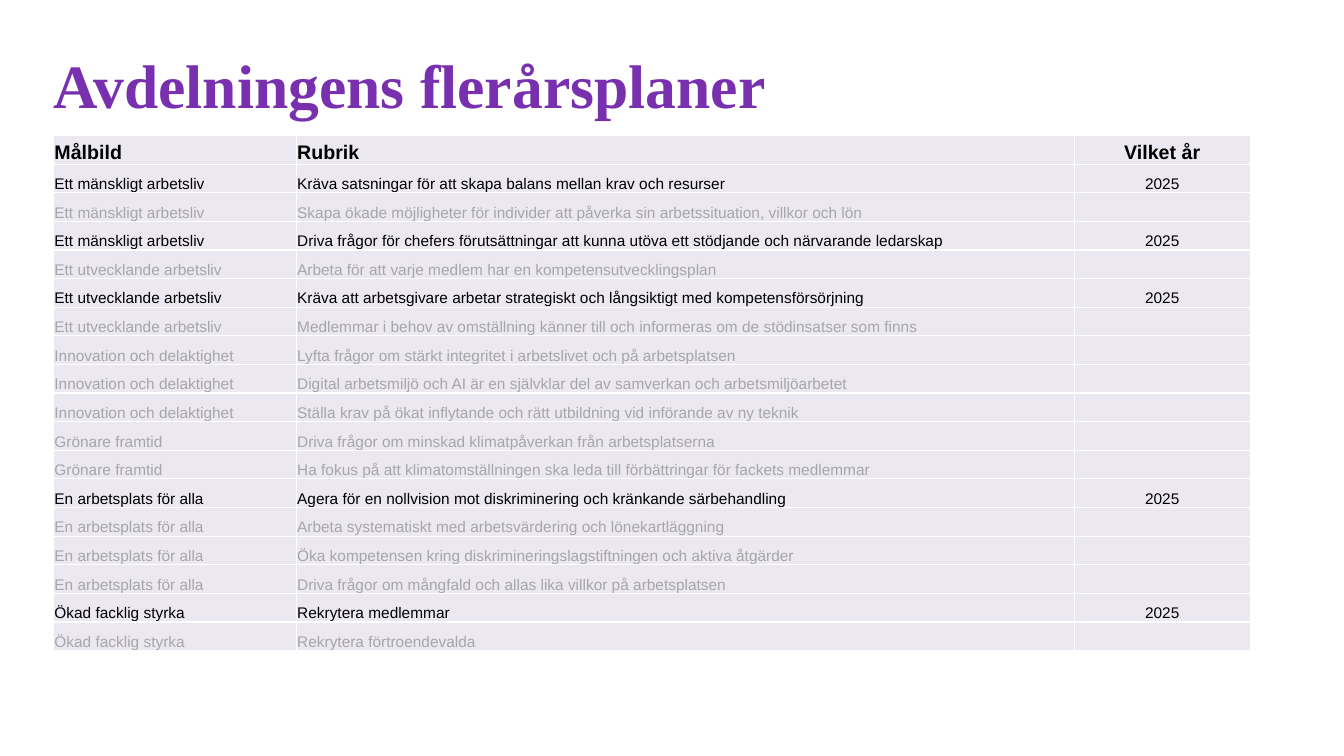
from dataclasses import dataclass
from typing import Any, NamedTuple

import pptx
import pptx.dml.color
import pptx.enum.text
import pptx.oxml.ns
import pptx.util
from lxml import etree

Pt = pptx.util.Pt
Align = pptx.enum.text.PP_ALIGN
Anchor = pptx.enum.text.MSO_ANCHOR
qn = pptx.oxml.ns.qn


@dataclass(frozen=True)
class Theme:
    title_colour: str = "7930AE"
    active_colour: str = "000000"
    muted_colour: str = "A6A6A6"
    cell_colour: str = "ECE8F2"
    border_colour: str = "FFFFFF"
    title_font: str = "Times New Roman"
    table_font: str = "Arial"
    title_size: float = 44
    header_size: float = 14
    body_size: float = 11


class Plan(NamedTuple):
    goal: str
    heading: str
    year: str = ""


class Column(NamedTuple):
    header: str
    width: float
    align: Any


THEME = Theme()
LEFT = 38.2
ROW_HEIGHT = 20.44
COLUMNS = [
    Column("Målbild", 173.4, Align.LEFT),
    Column("Rubrik", 555.7, Align.LEFT),
    Column("Vilket år", 125.8, Align.CENTER),
]
HUMANE = "Ett mänskligt arbetsliv"
EVOLVING = "Ett utvecklande arbetsliv"
INNOVATION = "Innovation och delaktighet"
GREENER = "Grönare framtid"
INCLUSIVE = "En arbetsplats för alla"
STRENGTH = "Ökad facklig styrka"
PLANS = [
    Plan(HUMANE, "Kräva satsningar för att skapa balans mellan krav och resurser", "2025"),
    Plan(HUMANE, "Skapa ökade möjligheter för individer att påverka sin arbetssituation, villkor och lön"),
    Plan(HUMANE, "Driva frågor för chefers förutsättningar att kunna utöva ett stödjande och närvarande ledarskap", "2025"),
    Plan(EVOLVING, "Arbeta för att varje medlem har en kompetensutvecklingsplan"),
    Plan(EVOLVING, "Kräva att arbetsgivare arbetar strategiskt och långsiktigt med kompetensförsörjning", "2025"),
    Plan(EVOLVING, "Medlemmar i behov av omställning känner till och informeras om de stödinsatser som finns"),
    Plan(INNOVATION, "Lyfta frågor om stärkt integritet i arbetslivet och på arbetsplatsen"),
    Plan(INNOVATION, "Digital arbetsmiljö och AI är en självklar del av samverkan och arbetsmiljöarbetet"),
    Plan(INNOVATION, "Ställa krav på ökat inflytande och rätt utbildning vid införande av ny teknik"),
    Plan(GREENER, "Driva frågor om minskad klimatpåverkan från arbetsplatserna"),
    Plan(GREENER, "Ha fokus på att klimatomställningen ska leda till förbättringar för fackets medlemmar"),
    Plan(INCLUSIVE, "Agera för en nollvision mot diskriminering och kränkande särbehandling", "2025"),
    Plan(INCLUSIVE, "Arbeta systematiskt med arbetsvärdering och lönekartläggning"),
    Plan(INCLUSIVE, "Öka kompetensen kring diskrimineringslagstiftningen och aktiva åtgärder"),
    Plan(INCLUSIVE, "Driva frågor om mångfald och allas lika villkor på arbetsplatsen"),
    Plan(STRENGTH, "Rekrytera medlemmar", "2025"),
    Plan(STRENGTH, "Rekrytera förtroendevalda"),
]


def apply_format(target: Any, values: dict[str, Any]) -> None:
    for name, value in values.items():
        setattr(target, name, value)


def write_text(para: Any, text: str, font: str, size: float, colour: str, bold: bool) -> None:
    if not text:
        etree.SubElement(para._p, qn("a:endParaRPr"), sz=str(int(size * 100)))
        return
    span = para.add_run()
    span.text = text
    apply_format(span.font, {"name": font, "size": Pt(size), "bold": bold})
    span.font.color.rgb = pptx.dml.color.RGBColor.from_string(colour)


def add_borders(cell: Any) -> None:
    properties = cell._tc.get_or_add_tcPr()
    for side in ("lnL", "lnR", "lnT", "lnB"):
        line = etree.SubElement(properties, qn(f"a:{side}"), w=str(Pt(1)))
        fill = etree.SubElement(line, qn("a:solidFill"))
        etree.SubElement(fill, qn("a:srgbClr"), val=THEME.border_colour)


def draw_title(page: Any) -> None:
    box = page.shapes.add_textbox(Pt(LEFT), Pt(28.8), Pt(765.4), Pt(102.2))
    frame = box.text_frame
    apply_format(frame, {
        "word_wrap": True, "vertical_anchor": Anchor.TOP, "margin_left": 0,
        "margin_right": 0, "margin_top": Pt(5), "margin_bottom": 0,
    })
    write_text(frame.paragraphs[0], "Avdelningens flerårsplaner", THEME.title_font,
               THEME.title_size, THEME.title_colour, True)


def draw_cell(cell: Any, text: str, align: Any, size: float, colour: str, bold: bool) -> None:
    apply_format(cell, {
        "vertical_anchor": Anchor.BOTTOM, "margin_left": Pt(0.7),
        "margin_right": Pt(0.7), "margin_top": Pt(0.7), "margin_bottom": 0,
    })
    add_borders(cell)
    cell.fill.solid()
    cell.fill.fore_color.rgb = pptx.dml.color.RGBColor.from_string(THEME.cell_colour)
    para = cell.text_frame.paragraphs[0]
    para.alignment = align
    write_text(para, text, THEME.table_font, size, colour, bold)


def draw_table(page: Any) -> None:
    rows = [Plan(*(column.header for column in COLUMNS)), *PLANS]
    width = sum(column.width for column in COLUMNS)
    table = page.shapes.add_table(len(rows), len(COLUMNS), Pt(LEFT), Pt(96.8),
                                  Pt(width), Pt(ROW_HEIGHT * len(rows))).table
    apply_format(table, {"first_row": False, "horz_banding": False})
    for index, column in enumerate(COLUMNS):
        table.columns[index].width = Pt(column.width)
    for row, plan in enumerate(rows):
        table.rows[row].height = Pt(ROW_HEIGHT)
        header = row == 0
        size = THEME.header_size if header else THEME.body_size
        colour = THEME.active_colour if plan.year else THEME.muted_colour
        for index, (text, column) in enumerate(zip(plan, COLUMNS)):
            draw_cell(table.cell(row, index), text, column.align, size, colour, header)


def main() -> None:
    """Build the slide of multi-year plans and save it."""
    deck = pptx.Presentation()
    apply_format(deck, {"slide_width": Pt(960), "slide_height": Pt(540)})
    page = deck.slides.add_slide(deck.slide_layouts[6])
    draw_title(page)
    draw_table(page)
    deck.save("out.pptx")


if __name__ == "__main__":
    main()
